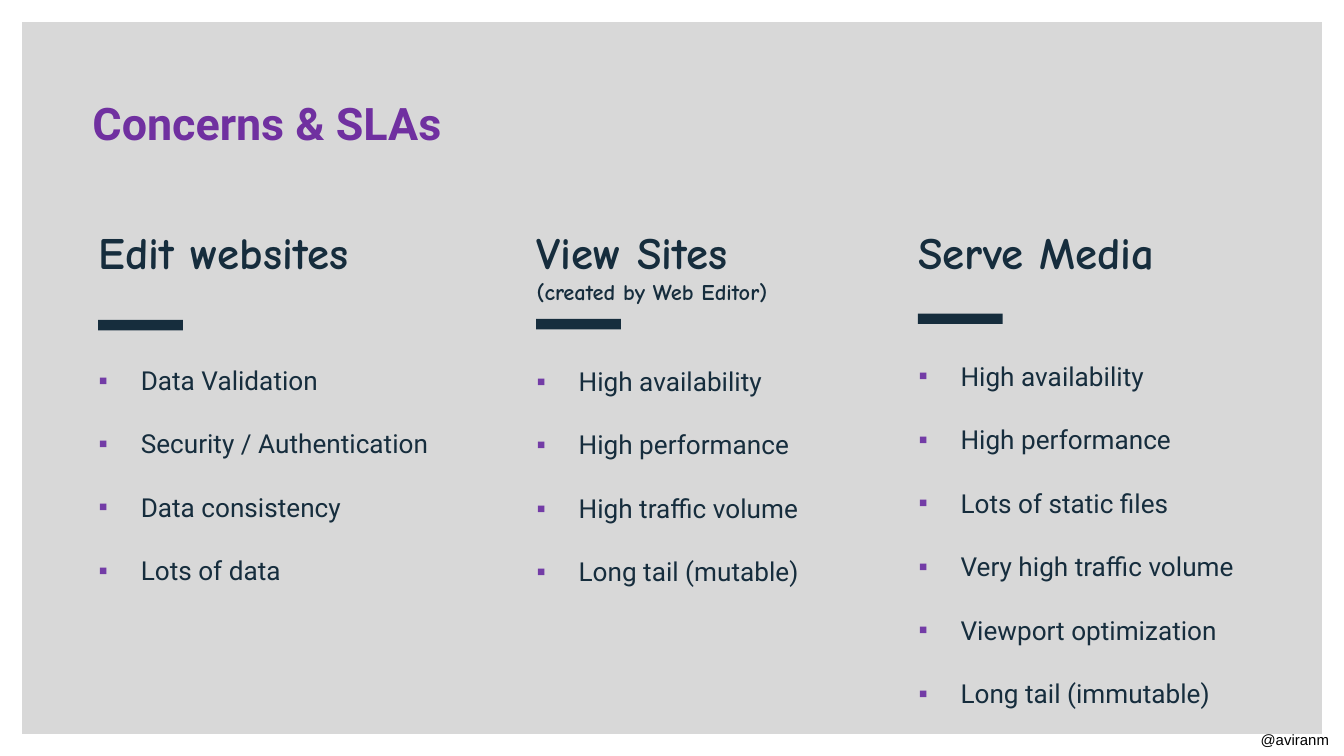
"""Build the 'Concerns & SLAs' slide with three bulleted columns."""
from lxml import etree
from pptx import Presentation
from pptx.dml.color import RGBColor
from pptx.enum import shapes, text
from pptx.oxml.ns import qn
from pptx.util import Pt

TITLE = "Concerns & SLAs"
HANDLE = "@aviranm"
COLUMNS = [
    dict(heading="Edit websites", note="", left=45.8, width=226.8, bar=171.4, list=191.6,
         items=["Data Validation", "Security / Authentication", "Data consistency",
                "Lots of data"]),
    dict(heading="View Sites", note="(created by Web Editor)", left=280.4, width=197.3,
         bar=170.9, list=192.2,
         items=["High availability", "High performance", "High traffic volume",
                "Long tail (mutable)"]),
    dict(heading="Serve Media", note="", left=485, width=192.2, bar=168, list=189.4,
         items=["High availability", "High performance", "Lots of static files",
                "Very high traffic volume", "Viewport optimization",
                "Long tail (immutable)"]),
]
THEME = dict(
    panel="D8D8D8", title="7030A0", ink="162D3D", bullet="733CA6", handle="000000",
    body_font="Roboto", heading_font="Comic Neue", handle_font="Arial",
    title_size=24, heading_size=24, note_size=12, item_size=14, handle_size=8,
)
HEADING_TOP, ITEM_PITCH, ITEM_GAP, INDENT = 116.6, 33.6, 17.2, 22.5


def add_bar(parent, left, top, width, height, color):
    s = parent.add_shape(shapes.MSO_SHAPE.RECTANGLE, Pt(left), Pt(top), Pt(width), Pt(height))
    s.shadow.inherit = False
    s.fill.solid()
    s.fill.fore_color.rgb = RGBColor.from_string(THEME[color])
    s.line.fill.background()


def add_text(parent, left, top, width, height, inset=3.6, wrap=True):
    tf = parent.add_textbox(Pt(left), Pt(top), Pt(width), Pt(height)).text_frame
    tf.word_wrap = wrap
    tf.vertical_anchor = text.MSO_ANCHOR.TOP
    tf.margin_left = tf.margin_right = Pt(7.2)
    tf.margin_top = tf.margin_bottom = Pt(inset)
    return tf


def add_run(p, words, role, font, color, bold=False):
    r = p.add_run()
    r.text = words
    r.font.name = THEME[font]
    r.font.size = Pt(THEME[role + "_size"])
    r.font.bold = bold
    r.font.color.rgb = RGBColor.from_string(THEME[color])


def add_bullet(p):
    pPr = p._p.get_or_add_pPr()
    pPr.set("marL", str(Pt(INDENT)))
    pPr.set("indent", str(-Pt(INDENT)))
    color = etree.SubElement(pPr, qn("a:buClr"))
    etree.SubElement(color, qn("a:srgbClr"), val=THEME["bullet"])
    etree.SubElement(pPr, qn("a:buFont"), typeface="Arial")
    etree.SubElement(pPr, qn("a:buChar"), char="▪")


def add_column(slide, column):
    group = slide.shapes.add_group_shape().shapes
    left, width, items = column["left"], column["width"], column["items"]

    tf = add_text(group, left, column["list"], width, len(items) * ITEM_PITCH - 8)
    for i, item in enumerate(items):
        p = tf.paragraphs[0] if i == 0 else tf.add_paragraph()
        p.space_before = Pt(ITEM_GAP if i else 0)
        add_bullet(p)
        add_run(p, item, "item", "body_font", "ink")

    p = add_text(group, left, HEADING_TOP, width, 56 if column["note"] else 27).paragraphs[0]
    add_run(p, column["heading"], "heading", "heading_font", "ink", True)
    if column["note"]:
        p.add_line_break()
        add_run(p, column["note"], "note", "heading_font", "ink", True)

    add_bar(group, left + 6.8, column["bar"], 45.4, 5.6, "ink")


def main():
    prs = Presentation()
    prs.slide_width, prs.slide_height = Pt(720), Pt(405)
    slide = prs.slides.add_slide(prs.slide_layouts[6])

    add_bar(slide.shapes, 11.8, 11.8, 696.4, 381.4, "panel")
    tf = add_text(slide.shapes, 668.2, 388.1, 51.8, 17, wrap=False)
    add_run(tf.paragraphs[0], HANDLE, "handle", "handle_font", "handle")
    tf = add_text(slide.shapes, 42.5, 43.9, 544.3, 67.7, inset=7.2)
    add_run(tf.paragraphs[0], TITLE, "title", "body_font", "title", True)
    for column in COLUMNS:
        add_column(slide, column)

    prs.save("out.pptx")


if __name__ == "__main__":
    main()
